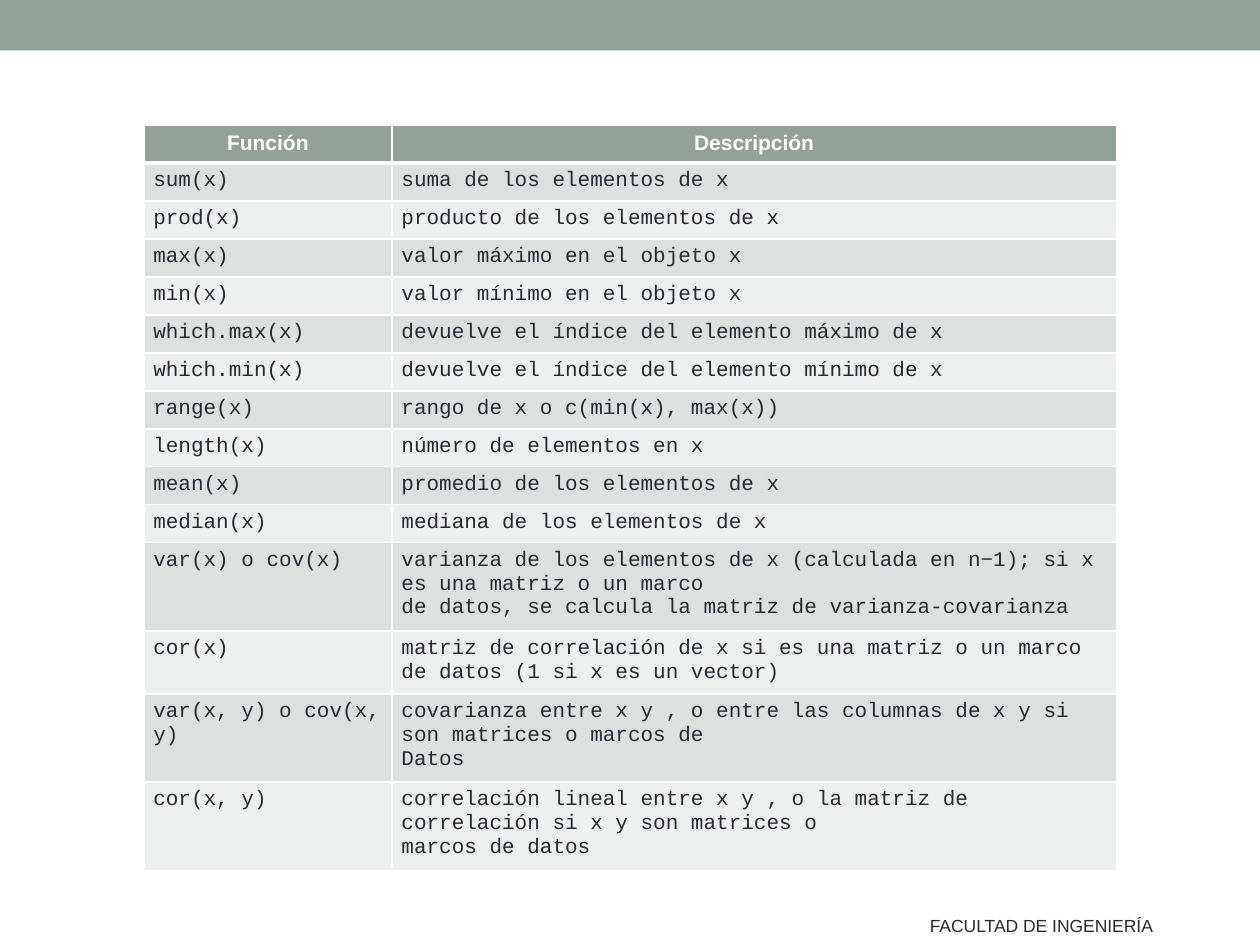
from lxml import etree
from pptx import Presentation
from pptx.dml.color import RGBColor
from pptx.enum import shapes, text
from pptx.oxml import ns
from pptx.util import Pt

COLORS = {"sage": "93A299", "band": "DCE0DE", "pale": "EEF0EF",
          "ink": "292934", "white": "FFFFFF"}

HEADINGS = ("Función", "Descripción")
# function, description (a line break starts a paragraph), lines it fills
FUNCTIONS = [
    ("sum(x)", "suma de los elementos de x", 1),
    ("prod(x)", "producto de los elementos de x", 1),
    ("max(x)", "valor máximo en el objeto x", 1),
    ("min(x)", "valor mínimo en el objeto x", 1),
    ("which.max(x)", "devuelve el índice del elemento máximo de x", 1),
    ("which.min(x)", "devuelve el índice del elemento mínimo de x", 1),
    ("range(x)", "rango de x o c(min(x), max(x))", 1),
    ("length(x)", "número de elementos en x", 1),
    ("mean(x)", "promedio de los elementos de x", 1),
    ("median(x)", "mediana de los elementos de x", 1),
    ("var(x) o cov(x)",
     "varianza de los elementos de x (calculada en n−1); si x es una matriz o un marco\n"
     "de datos, se calcula la matriz de varianza-covarianza", 3),
    ("cor(x)",
     "matriz de correlación de x si es una matriz o un marco de datos "
     "(1 si x es un vector)", 2),
    ("var(x, y) o cov(x, y)",
     "covarianza entre x y , o entre las columnas de x y si son matrices o marcos de\n"
     "Datos", 3),
    ("cor(x, y)",
     "correlación lineal entre x y , o la matriz de correlación si x y son matrices o\n"
     "marcos de datos", 3),
]


def rgb(name):
    return RGBColor.from_string(COLORS[name])


def write(frame, content, font="Arial", size=12, color="ink", bold=False,
          align=text.PP_ALIGN.LEFT):
    for i, line in enumerate(content.split("\n")):
        paragraph = frame.add_paragraph() if i else frame.paragraphs[0]
        paragraph.alignment = align
        run = paragraph.add_run()
        run.text = line
        run.font.name, run.font.size, run.font.bold = font, Pt(size), bold
        run.font.color.rgb = rgb(color)


def style_cell(cell, fill, top=1, bottom=1):
    cell.margin_left = cell.margin_right = Pt(5.4)
    cell.margin_top = cell.margin_bottom = Pt(3.6)
    properties = cell._tc.get_or_add_tcPr()
    for side, width in (("L", 1), ("R", 1), ("T", top), ("B", bottom)):
        border = etree.SubElement(properties, ns.qn(f"a:ln{side}"), w=str(Pt(width)))
        solid = etree.SubElement(border, ns.qn("a:solidFill"))
        etree.SubElement(solid, ns.qn("a:srgbClr"), val=COLORS["white"])
    cell.fill.solid()
    cell.fill.fore_color.rgb = rgb(fill)


def add_banner(slide, left, top, width, height):
    banner = slide.shapes.add_shape(shapes.MSO_SHAPE.RECTANGLE, Pt(left), Pt(top),
                                    Pt(width), Pt(height))
    banner.shadow.inherit = False
    banner.fill.solid()
    banner.fill.fore_color.rgb = rgb("sage")
    banner.line.fill.background()


def add_function_table(slide, left, top, width, height):
    table = slide.shapes.add_table(len(FUNCTIONS) + 1, 2, Pt(left), Pt(top),
                                   Pt(width), Pt(height)).table
    name_width = 141.8
    table.columns[0].width = Pt(name_width)
    table.columns[1].width = Pt(width - name_width)

    # Header row
    table.rows[0].height = Pt(21)
    for column, heading in enumerate(HEADINGS):
        cell = table.cell(0, column)
        style_cell(cell, "sage", bottom=3)
        write(cell.text_frame, heading, color="white", bold=True,
              align=text.PP_ALIGN.CENTER)

    # Banded body rows, as high as their lines need
    for row, (*entries, lines) in enumerate(FUNCTIONS, start=1):
        table.rows[row].height = Pt(7.4 + 14.3 * lines)
        for column, entry in enumerate(entries):
            cell = table.cell(row, column)
            style_cell(cell, "band" if row % 2 else "pale", top=3 if row == 1 else 1)
            write(cell.text_frame, entry, font="Courier New")


def add_footer(slide, left, top, width, height):
    footer = slide.shapes.add_textbox(Pt(left), Pt(top), Pt(width), Pt(height))
    footer.text_frame.word_wrap = False
    footer.text_frame.auto_size = text.MSO_AUTO_SIZE.SHAPE_TO_FIT_TEXT
    write(footer.text_frame, "FACULTAD DE INGENIERÍA", size=10)


def main():
    deck = Presentation()
    deck.slide_width, deck.slide_height = Pt(720), Pt(540)
    slide = deck.slides.add_slide(deck.slide_layouts[6])
    add_banner(slide, 0, 0, 720, 28.8)
    add_footer(slide, 524.2, 519.1, 145.4, 19.4)
    add_function_table(slide, 82.2, 71.6, 555.8, 424.8)
    deck.save("out.pptx")


if __name__ == "__main__":
    main()
